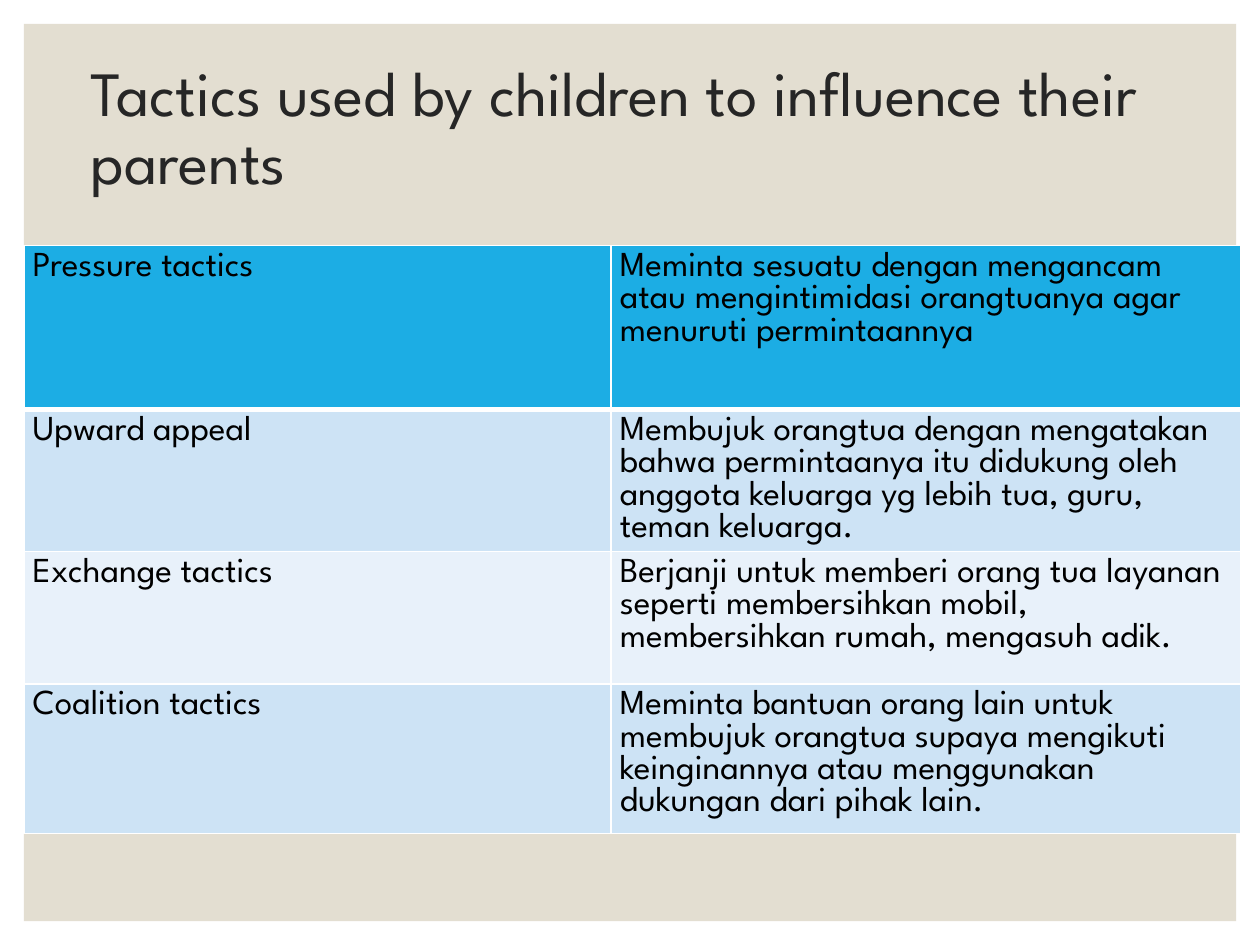
from lxml.etree import SubElement
from pptx import Presentation
from pptx.dml.color import RGBColor
from pptx.enum.shapes import MSO_SHAPE as Shape
from pptx.enum.text import MSO_ANCHOR as Anchor, MSO_AUTO_SIZE as AutoSize, PP_ALIGN as Align
from pptx.oxml.ns import qn
from pptx.util import Inches, Pt

FONT = "League Spartan"
WHITE = RGBColor(0xFF, 0xFF, 0xFF)
BLACK = RGBColor(0x00, 0x00, 0x00)
CHARCOAL = RGBColor(0x26, 0x26, 0x26)
SAND = RGBColor(0xE3, 0xDE, 0xD1)
HEADER_BLUE = RGBColor(0x1C, 0xAD, 0xE4)
BAND_DARK = RGBColor(0xCD, 0xE3, 0xF5)
BAND_LIGHT = RGBColor(0xE8, 0xF1, 0xFA)

COLUMN_WIDTHS = (4.66, 5)
ROW_HEIGHTS = (1.3, 1.05, 1.05, 1.19)
TACTICS = (
    ("Pressure tactics",
     "Meminta sesuatu dengan mengancam atau mengintimidasi orangtuanya "
     "agar menuruti permintaannya"),
    ("Upward appeal",
     "Membujuk orangtua dengan mengatakan bahwa permintaanya itu didukung "
     "oleh anggota keluarga yg lebih tua, guru, teman keluarga."),
    ("Exchange tactics",
     "Berjanji untuk memberi orang tua layanan seperti membersihkan mobil, "
     "membersihkan rumah, mengasuh adik."),
    ("Coalition tactics",
     "Meminta bantuan orang lain untuk membujuk orangtua supaya mengikuti "
     "keinginannya atau menggunakan dukungan dari pihak lain."),
)


def style_font(paragraph, size, color):
    paragraph.font.name = FONT
    paragraph.font.size = Pt(size)
    paragraph.font.color.rgb = color


def add_backdrop(slide):
    backdrop = slide.shapes.add_shape(
        Shape.RECTANGLE, Inches(0.19), Inches(0.19), Inches(9.62), Inches(7.12))
    backdrop.shadow.inherit = False
    backdrop.fill.solid()
    backdrop.fill.fore_color.rgb = SAND
    backdrop.line.fill.background()
    # Send behind the title
    slide.shapes._spTree.insert(2, backdrop._element)


def set_title(slide, text):
    title = slide.shapes.title
    title.left, title.top = Inches(0.62), Inches(0.31)
    title.width, title.height = Inches(8.62), Inches(1.45)
    frame = title.text_frame
    frame.text = text
    frame.auto_size = AutoSize.NONE
    frame.vertical_anchor = Anchor.MIDDLE
    heading = frame.paragraphs[0]
    heading.alignment = Align.LEFT
    heading.line_spacing = 0.9
    style_font(heading, 36, CHARCOAL)


def set_borders(cell, bottom_width):
    properties = cell._tc.get_or_add_tcPr()
    for side, width in (("L", 1), ("R", 1), ("T", 1), ("B", bottom_width)):
        border = SubElement(properties, qn(f"a:ln{side}"), w=str(Pt(width)))
        fill = SubElement(border, qn("a:solidFill"))
        SubElement(fill, qn("a:srgbClr"), val=str(WHITE))


def fill_cell(cell, text, color, bottom_width):
    set_borders(cell, bottom_width)
    cell.fill.solid()
    cell.fill.fore_color.rgb = color
    cell.margin_left = cell.margin_right = Inches(0.07)
    cell.margin_top = cell.margin_bottom = Inches(0.05)
    cell.text = text
    style_font(cell.text_frame.paragraphs[0], 20, BLACK)


def add_tactics_table(slide):
    table = slide.shapes.add_table(
        len(TACTICS), len(COLUMN_WIDTHS), Inches(0.19), Inches(1.95),
        Inches(sum(COLUMN_WIDTHS)), Inches(sum(ROW_HEIGHTS))).table
    table.first_row = table.horz_banding = False
    for column, width in zip(table.columns, COLUMN_WIDTHS):
        column.width = Inches(width)
    for index, (row, height, texts) in enumerate(zip(table.rows, ROW_HEIGHTS, TACTICS)):
        row.height = Inches(height)
        is_header = index == 0
        band = BAND_DARK if index % 2 else BAND_LIGHT
        for cell, text in zip(row.cells, texts):
            fill_cell(cell, text, HEADER_BLUE if is_header else band,
                      3 if is_header else 1)


def main():
    presentation = Presentation()
    presentation.slide_width, presentation.slide_height = Inches(10), Inches(7.5)
    slide = presentation.slides.add_slide(presentation.slide_layouts[5])
    add_backdrop(slide)
    set_title(slide, "Tactics used by children to influence their parents")
    add_tactics_table(slide)
    presentation.save("out.pptx")


if __name__ == "__main__":
    main()
